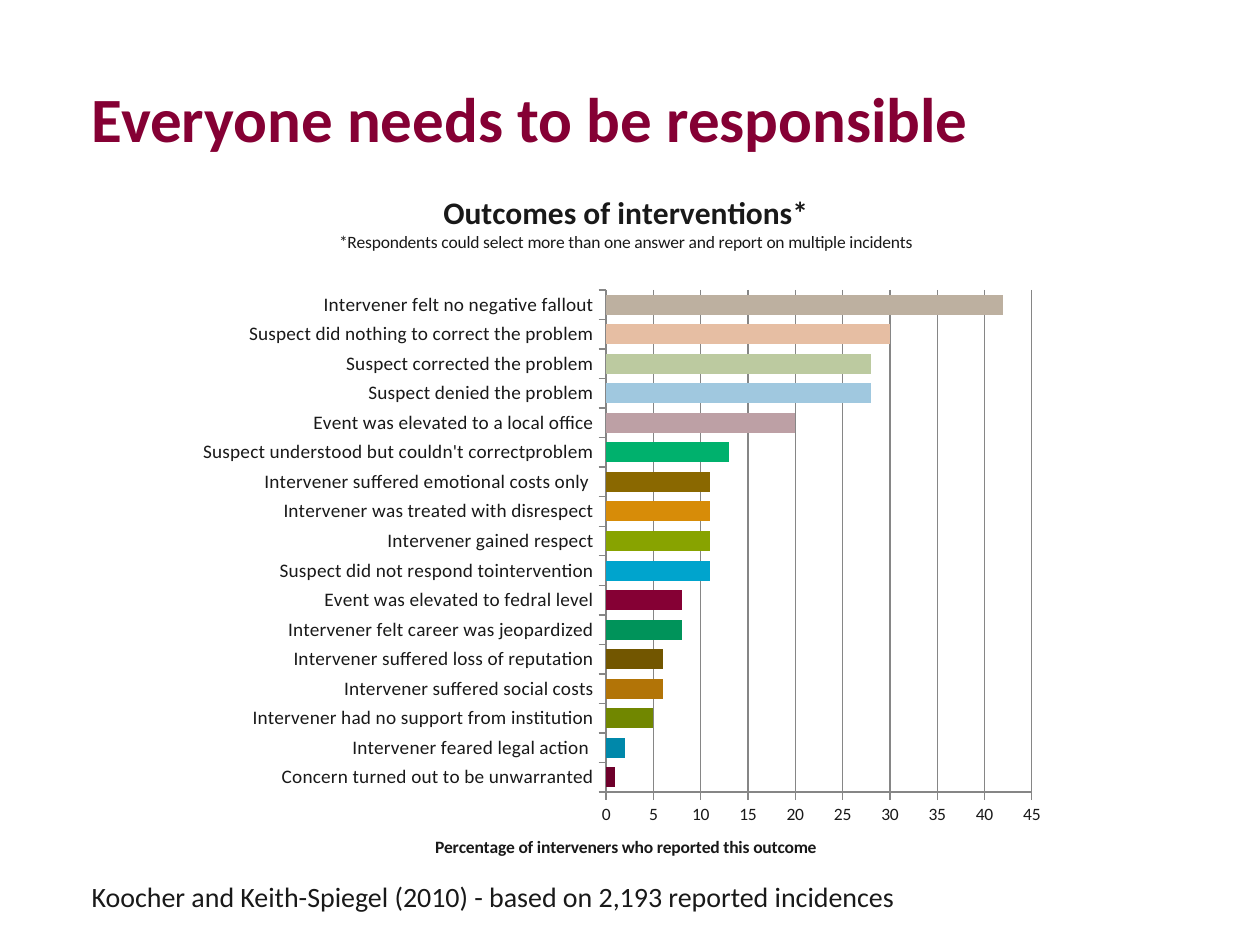
import pptx
import pptx.chart.data
import pptx.dml.color
import pptx.enum.chart
import pptx.enum.text
import pptx.oxml
import pptx.oxml.ns
import pptx.util
from pptx.util import Inches

FONT = "Calibri"
COLORS = {"title": "850034", "text": "191919", "line": "868686"}

# Category, percentage and bar colour, from the bottom bar upwards
OUTCOMES = [
    ("Concern turned out to be unwarranted", 1, "6E002B"),
    ("Intervener feared legal action ", 2, "0088AA"),
    ("Intervener had no support from institution", 5, "718700"),
    ("Intervener suffered social costs", 6, "B27407"),
    ("Intervener suffered loss of reputation", 6, "725600"),
    ("Intervener felt career was jeopardized", 8, "00935A"),
    ("Event was elevated to fedral level", 8, "850034"),
    ("Suspect did not respond tointervention", 11, "00A4CD"),
    ("Intervener gained respect", 11, "88A300"),
    ("Intervener was treated with disrespect", 11, "D78C08"),
    ("Intervener suffered emotional costs only ", 11, "8A6800"),
    ("Suspect understood but couldn't correctproblem", 13, "00B16D"),
    ("Event was elevated to a local office", 20, "BDA0A5"),
    ("Suspect denied the problem", 28, "A0C8DF"),
    ("Suspect corrected the problem", 28, "BCCAA0"),
    ("Suspect did nothing to correct the problem", 30, "E6BEA3"),
    ("Intervener felt no negative fallout", 42, "BDB0A0"),
]


def style(font, size, color="text", bold=False):
    font.name = FONT
    font.size = pptx.util.Pt(size)
    font.bold = bold
    font.color.rgb = pptx.dml.color.RGBColor.from_string(COLORS[color])


def set_layout(parent, index, **values):
    for old in parent.findall(pptx.oxml.ns.qn("c:layout")):
        parent.remove(old)
    items = "".join(f'<c:{tag} val="{val}"/>' for tag, val in values.items())
    parent.insert(index, pptx.oxml.parse_xml(
        f'<c:layout {pptx.oxml.ns.nsdecls("c")}><c:manualLayout>{items}'
        '</c:manualLayout></c:layout>'))


prs = pptx.Presentation()
prs.slide_width, prs.slide_height = Inches(10), Inches(7.5)
s = prs.slides.add_slide(prs.slide_layouts[5])

# Title
title = s.shapes.title
title.left, title.top = Inches(0.63), Inches(0.43)
title.width, title.height = Inches(7.31), Inches(1.01)
tf = title.text_frame
tf.text = "Everyone needs to be responsible"
tf.vertical_anchor = pptx.enum.text.MSO_ANCHOR.MIDDLE
p = tf.paragraphs[0]
p.alignment = pptx.enum.text.PP_ALIGN.LEFT
style(p.runs[0].font, 36, "title", True)

# Bar chart
data = pptx.chart.data.CategoryChartData()
data.categories = [name for name, _, _ in OUTCOMES]
data.add_series("Series 1", [value for _, value, _ in OUTCOMES])
chart = s.shapes.add_chart(
    pptx.enum.chart.XL_CHART_TYPE.BAR_CLUSTERED,
    Inches(0.74), Inches(1.44), Inches(7.68), Inches(5.41), data).chart
style(chart.font, 10)
chart.has_legend = False
plot = chart.plots[0]
plot.gap_width = 48
plot.vary_by_categories = False
for i, (_, _, color) in enumerate(OUTCOMES):
    fill = plot.series[0].points[i].format.fill
    fill.solid()
    fill.fore_color.rgb = pptx.dml.color.RGBColor.from_string(color)

# Axes
cat, val = chart.category_axis, chart.value_axis
val.minimum_scale, val.maximum_scale, val.major_unit = 0, 45, 5
val.has_major_gridlines = True
val.tick_labels.number_format = "General"
val.tick_labels.number_format_is_linked = False
for axis, size in ((cat, 11), (val, 10)):
    axis.major_tick_mark = pptx.enum.chart.XL_TICK_MARK.OUTSIDE
    style(axis.tick_labels.font, size)
for part in (cat, val, val.major_gridlines):
    part.format.line.width = pptx.util.Pt(0.75)
    part.format.line.color.rgb = pptx.dml.color.RGBColor.from_string(COLORS["line"])

# Chart title and axis title
tf = chart.chart_title.text_frame
tf.text = ("Outcomes of interventions*\n"
           "*Respondents could select more than one answer and report on multiple incidents")
style(tf.paragraphs[0].runs[0].font, 18, bold=True)
style(tf.paragraphs[1].runs[0].font, 10)
tf = val.axis_title.text_frame
tf.text = "Percentage of interveners who reported this outcome"
style(tf.paragraphs[0].runs[0].font, 10, bold=True)

# Manual positions inside the chart
chart_title = chart.chart_title._element
chart_title.find(pptx.oxml.ns.qn("c:overlay")).set("val", "1")
set_layout(chart_title, 1, xMode="edge", yMode="edge", x=0.25, y=0.01)
set_layout(val.axis_title._element, 1, xMode="edge", yMode="edge", x=0.35, y=0.96)
set_layout(chart._chartSpace.chart.plotArea, 0, layoutTarget="inner", xMode="edge",
           yMode="edge", x=0.53, y=0.16, w=0.44, h=0.74)

# Source line
tf = s.shapes.add_textbox(Inches(0.63), Inches(6.93), Inches(6.66), Inches(0.37)).text_frame
tf.word_wrap = False
tf.auto_size = pptx.enum.text.MSO_AUTO_SIZE.SHAPE_TO_FIT_TEXT
tf.text = "Koocher and Keith-Spiegel (2010) - based on 2,193 reported incidences"
style(tf.paragraphs[0].runs[0].font, 16)

prs.save("out.pptx")
